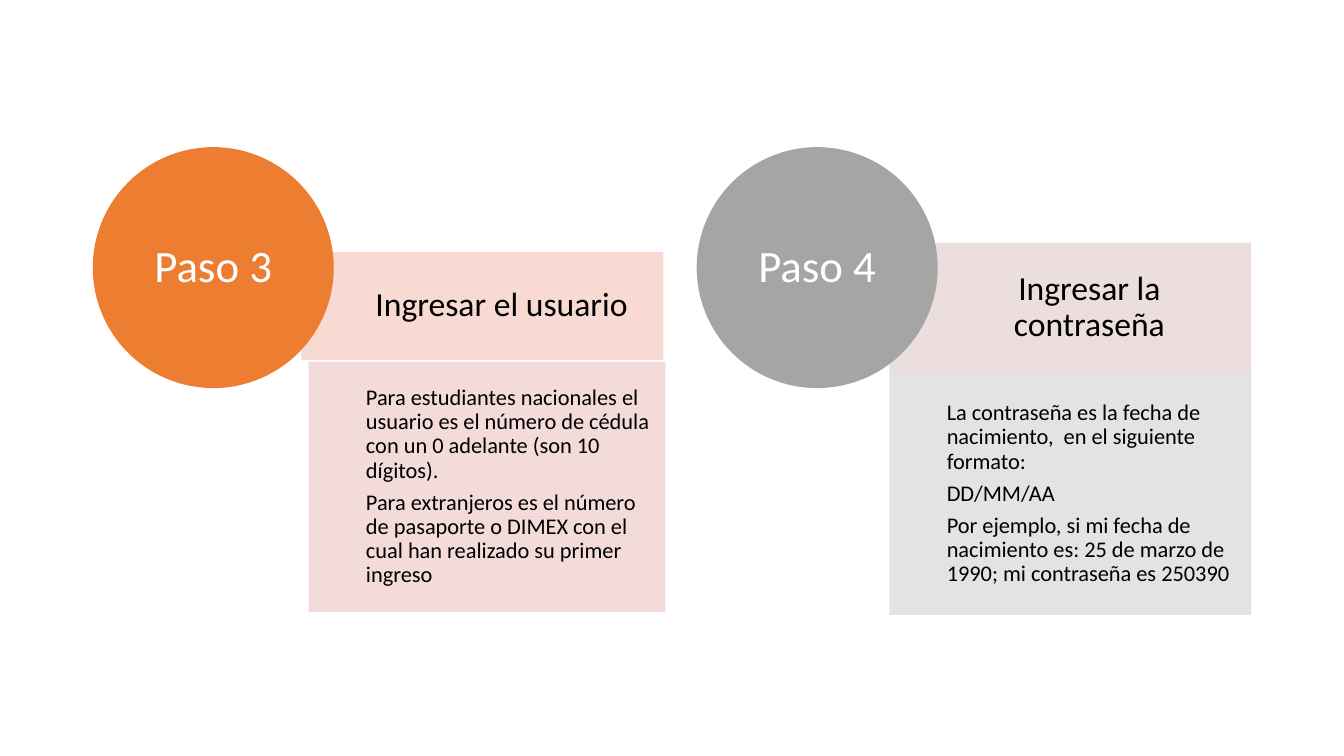
from lxml.etree import SubElement
from pptx import Presentation
from pptx.dml.color import RGBColor
from pptx.enum.shapes import MSO_SHAPE as Preset
from pptx.enum.text import MSO_ANCHOR as Anchor, MSO_AUTO_SIZE as AutoSize, PP_ALIGN as Align
from pptx.oxml.ns import qn
from pptx.util import Inches, Pt

STEPS = [
    {
        "name": "Paso 3", "color": "ED7D31", "circle_left": 0.92,
        "heading": ("Ingresar el usuario", "F8D7CE", (2.99, 2.5, 3.59, 1.07)),
        "details": ([
            "Para estudiantes nacionales el usuario es el número de cédula con un 0 adelante (son 10 dígitos).",
            "Para extranjeros es el número de pasaporte o DIMEX con el cual han realizado su primer ingreso",
        ], "F1D8D4", (3.06, 3.59, 3.54, 2.48)),
    },
    {
        "name": "Paso 4", "color": "A5A5A5", "circle_left": 6.91,
        "heading": ("Ingresar la contraseña", "E9DBDA", (8.82, 2.41, 3.59, 1.29)),
        "details": ([
            "La contraseña es la fecha de nacimiento,  en el siguiente formato:",
            "DD/MM/AA",
            "Por ejemplo, si mi fecha de nacimiento es: 25 de marzo de 1990; mi contraseña es 250390",
        ], "E1E1E1", (8.82, 3.7, 3.59, 2.4)),
    },
]


def set_all(target, values):
    for name, value in values.items():
        setattr(target, name, value)


def paint(color_format, color):
    color_format.rgb = RGBColor.from_string(color)


class StepPage:
    """Holds the text style and the slide that shows the steps."""

    font = "Calibri"
    text_indent = 0.57
    circle_top = 1.46
    circle_size = 2.39

    def __init__(self, deck):
        self.page = deck.slides.add_slide(deck.slide_layouts.get_by_name("Comparison"))
        title = self.page.shapes.title.element
        title.getparent().remove(title)

    def fill(self, shape, color, alpha=None):
        shape.fill.solid()
        paint(shape.fill.fore_color, color)
        shape.line.fill.background()
        if alpha:
            tone = next(shape.element.iter(qn("a:srgbClr")))
            SubElement(tone, qn("a:alpha")).set("val", str(alpha * 1000))

    def add_text(self, shape, lines, size, color, align, left=0, margin=0):
        frame = shape.text_frame
        set_all(frame, {
            "word_wrap": True, "auto_size": AutoSize.NONE, "vertical_anchor": Anchor.MIDDLE,
            "margin_left": Inches(left), "margin_right": Inches(margin),
            "margin_top": Inches(margin), "margin_bottom": Inches(margin),
        })
        frame.text = "\n".join(lines)
        for para in frame.paragraphs:
            set_all(para, {
                "alignment": align, "line_spacing": 0.9,
                "space_before": Pt(0), "space_after": Pt(size * 0.35),
            })
            properties = para._p.get_or_add_pPr()
            properties.set("marL", "0")
            properties.set("indent", "0")
            SubElement(properties, qn("a:buNone"))
            for span in para.runs:
                set_all(span.font, {"name": self.font, "size": Pt(size), "bold": False})
                paint(span.font.color, color)

    def panel(self, index, lines, color, bounds, size, align, margin):
        box = self.page.placeholders[index]
        set_all(box, dict(zip(("left", "top", "width", "height"), map(Inches, bounds))))
        self.fill(box, color, alpha=90)
        self.add_text(box, lines, size, "000000", align, self.text_indent, margin)

    def circle(self, name, color, left):
        bounds = (left, self.circle_top, self.circle_size, self.circle_size)
        disc = self.page.shapes.add_shape(Preset.OVAL, *map(Inches, bounds))
        disc.shadow.inherit = False
        self.fill(disc, color)
        self.add_text(disc, [name], 32, "FFFFFF", Align.CENTER)

    def step(self, number, step):
        heading, heading_color, heading_bounds = step["heading"]
        details, details_color, details_bounds = step["details"]
        first = 1 + 2 * number
        self.panel(first, [heading], heading_color, heading_bounds, 24, Align.CENTER, 0.19)
        self.panel(first + 1, details, details_color, details_bounds, 16, Align.LEFT, 0.12)
        self.circle(step["name"], step["color"], step["circle_left"])


def main():
    deck = Presentation()
    set_all(deck, {"slide_width": Inches(13.33), "slide_height": Inches(7.5)})
    steps_page = StepPage(deck)
    for number, step in enumerate(STEPS):
        steps_page.step(number, step)
    deck.save("out.pptx")


if __name__ == "__main__":
    main()
